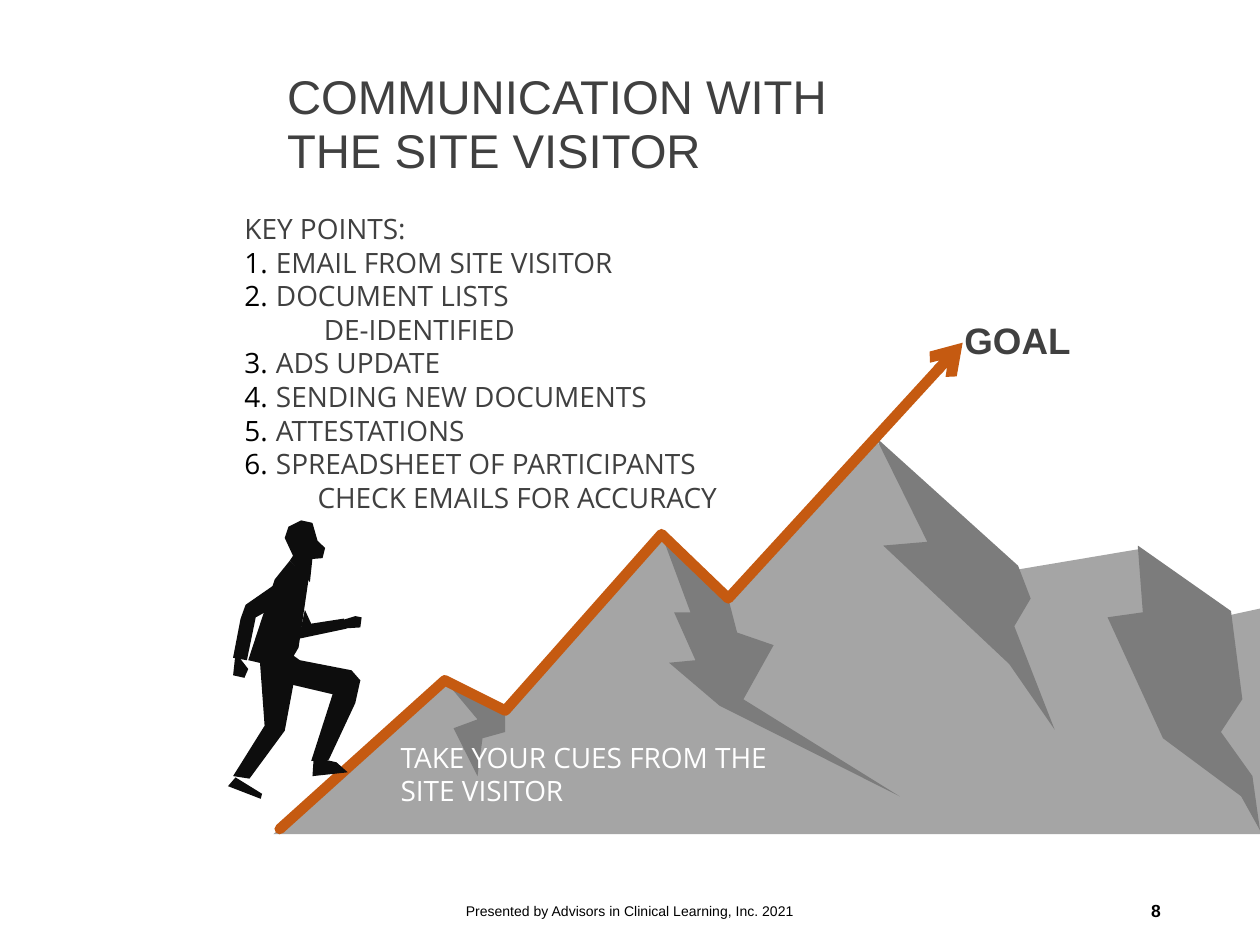
from lxml import etree
from pptx import Presentation
from pptx.dml.color import RGBColor
from pptx.enum.text import MSO_ANCHOR, PP_ALIGN
from pptx.oxml.ns import qn
from pptx.util import Inches, Pt

LEFT, CENTER, RIGHT = PP_ALIGN.LEFT, PP_ALIGN.CENTER, PP_ALIGN.RIGHT
TOP, MIDDLE = MSO_ANCHOR.TOP, MSO_ANCHOR.MIDDLE

COLORS = {
    "text": "404040", "white": "FFFFFF", "black": "000000", "figure": "0D0D0D",
    "rock": "A5A5A5", "shade": "7C7C7C", "trail": "C55A11",
}

RIDGE = [(0, 3.9), (1.36, 2.71), (1.84, 2.95), (3.08, 1.55), (3.61, 2.06), (4.78, 0.78),
         (5.91, 1.8), (6.86, 1.64), (7.6, 2.16), (7.83, 2.11)]
SHADES = {
    1: [(1.84, 3.09), (1.66, 3.14), (1.62, 3.44), (1.43, 3.06), (1.62, 2.99)],
    3: [(3.68, 2.3), (3.97, 2.4), (3.73, 2.83), (4.97, 3.6), (3.54, 2.88), (3.14, 2.54),
        (3.35, 2.52), (3.18, 2.14), (3.31, 2.14)],
    5: [(6.01, 2.03), (5.88, 2.25), (6.2, 3.07), (5.84, 2.55), (4.84, 1.61), (5.19, 1.58)],
    7: [(7.69, 2.83), (7.52, 3.09), (7.77, 3.44), (7.83, 3.87), (7.68, 3.6), (7.06, 3.14),
        (6.62, 2.18), (6.9, 2.14)],
}

BODY = {
    "back shoe": [(0.05, 2.05), (0.26, 2.18), (0.25, 2.22), (-0.01, 2.12)],
    "front shoe": [(0.67, 1.89), (0.85, 1.93), (0.94, 2.01), (0.66, 2.04)],
    "back leg": [(0.24, 1.09), (0.52, 1.25), (0.44, 1.68), (0.16, 2.06), (0.03, 2.04),
                 (0.28, 1.64)],
    "front leg": [(0.27, 0.91), (0.56, 1.12), (0.97, 1.2), (1.04, 1.28), (1, 1.46),
                  (0.79, 1.91), (0.65, 1.92), (0.82, 1.39), (0.31, 1.27)],
    "front hand": [(0.87, 0.81), (1, 0.77), (1.05, 0.78), (1.04, 0.86), (0.88, 0.87)],
    "front arm": [(0.6, 0.72), (0.65, 0.83), (0.91, 0.79), (0.93, 0.87), (0.55, 0.95)],
    "head": [(0.44, 0.15), (0.47, 0.06), (0.57, 0.01), (0.66, 0.03), (0.7, 0.17),
             (0.76, 0.23), (0.74, 0.31), (0.62, 0.32), (0.51, 0.3)],
    "neck": [(0.54, 0.24), (0.66, 0.31), (0.64, 0.5), (0.48, 0.33)],
    "jacket": [(0.15, 1.12), (0.36, 0.48), (0.48, 0.33), (0.63, 0.47), (0.55, 1.02),
               (0.45, 1.19)],
    "back hand": [(0.05, 1.06), (0.15, 1.19), (0.12, 1.26), (0.03, 1.24)],
    "back arm": [(0.49, 0.43), (0.48, 0.63), (0.21, 0.78), (0.14, 1.12), (0.03, 1.1),
                 (0.09, 0.79), (0.13, 0.68)],
}

KEY_POINTS = [
    ("KEY POINTS:", None), ("EMAIL FROM SITE VISITOR", "numbered"),
    ("DOCUMENT LISTS", "numbered"), ("DE-IDENTIFIED", 0.63),
    ("ADS UPDATE", "numbered"), ("SENDING NEW DOCUMENTS", "numbered"),
    ("ATTESTATIONS", "numbered"), ("SPREADSHEET OF PARTICIPANTS", "numbered"),
    ("CHECK EMAILS FOR ACCURACY", 0.58),
]


def rgb(name):
    return RGBColor.from_string(COLORS[name])


def add_outline(slide, left, top, points, fill=None):
    vertices = [(Inches(left + x), Inches(top + y)) for x, y in points]
    builder = slide.shapes.build_freeform(*vertices[0])
    builder.add_line_segments(vertices[1:], close=fill is not None)
    outline = builder.convert_to_shape()
    outline.shadow.inherit = False
    if fill:
        outline.fill.solid()
        outline.fill.fore_color.rgb = rgb(fill)
        outline.line.fill.background()
    else:
        outline.fill.background()
    return outline


def add_text(slide, box, lines, size, color="text", font="Arial", bold=False,
             align=LEFT, anchor=MIDDLE, inset=0.1, wrap=True):
    frame = slide.shapes.add_textbox(*map(Inches, box)).text_frame
    frame.word_wrap = wrap
    frame.vertical_anchor = anchor
    frame.margin_left = frame.margin_right = Inches(inset)
    frame.text = "\n".join(lines)
    for paragraph in frame.paragraphs:
        paragraph.alignment = align
        for run in paragraph.runs:
            run.font.name = font
            run.font.size = Pt(size)
            run.font.bold = bold
            run.font.color.rgb = rgb(color)
    return frame


def add_mountains(slide, left, top):
    base = RIDGE[0][1]
    add_outline(slide, left, top, RIDGE + [(RIDGE[-1][0], base)], "rock")
    lifted = [(x, y - 0.03) for x, y in RIDGE]
    for peak, slope in SHADES.items():
        add_outline(slide, left, top, lifted[peak:peak + 2] + slope, "shade")
    trail = add_outline(slide, left, top, [(0.05, 3.86)] + lifted[1:5] + [(5.47, 0)])
    trail.line.color.rgb = rgb("trail")
    trail.line.width = Pt(6)
    stroke = trail.line._get_or_add_ln()
    stroke.set("cap", "rnd")
    etree.SubElement(stroke, qn("a:round"))
    etree.SubElement(stroke, qn("a:tailEnd"), type="arrow")


def add_climber(slide, left, top):
    for points in BODY.values():
        add_outline(slide, left, top, points, "figure")


def add_key_points(slide, box):
    frame = add_text(slide, box, [line for line, _ in KEY_POINTS], 16,
                     font="Open Sans", anchor=TOP, inset=0)
    for paragraph, (_, style) in zip(frame.paragraphs, KEY_POINTS):
        if style is None:
            continue
        numbered = style == "numbered"
        if not numbered:
            paragraph.level = 1
        properties = paragraph._p.get_or_add_pPr()
        properties.set("marL", str(Inches(0.25 if numbered else style)))
        properties.set("indent", str(Inches(-0.25 if numbered else 0)))
        if numbered:
            tint = etree.SubElement(properties, qn("a:buClr"))
            etree.SubElement(tint, qn("a:srgbClr"), val=COLORS["black"])
            etree.SubElement(properties, qn("a:buAutoNum"), type="arabicPeriod")


def add_footer(slide, top, height):
    add_text(slide, (3.31, top, 3.38, height),
             ["Presented by Advisors in Clinical Learning, Inc. 2021"], 8, "black", align=CENTER)
    add_text(slide, (7.06, top, 2.25, height), ["8"], 10, "black", bold=True, align=RIGHT)


def main():
    deck = Presentation()
    deck.slide_width, deck.slide_height = Inches(10), Inches(7.5)
    slide = deck.slides.add_slide(deck.slide_layouts[6])
    title = add_text(slide, (2.18, 0.27, 7.14, 1.45),
                     ["COMMUNICATION WITH\vTHE SITE VISITOR"], 27)
    title.paragraphs[0].line_spacing = 0.94
    add_mountains(slide, 2.17, 2.72)
    add_text(slide, (3.18, 5.82, 3.03, 0.64), ["TAKE YOUR CUES FROM THE SITE VISITOR"], 16,
             "white", "Open Sans", inset=0)
    add_key_points(slide, (1.94, 1.63, 4.79, 2.5))
    add_text(slide, (7.55, 2.47, 1.05, 0.45), ["GOAL"], 21, bold=True,
             align=CENTER, anchor=TOP, wrap=False)
    add_climber(slide, 1.82, 4.12)
    add_footer(slide, 7.03, 0.4)
    deck.save("out.pptx")


if __name__ == "__main__":
    main()
